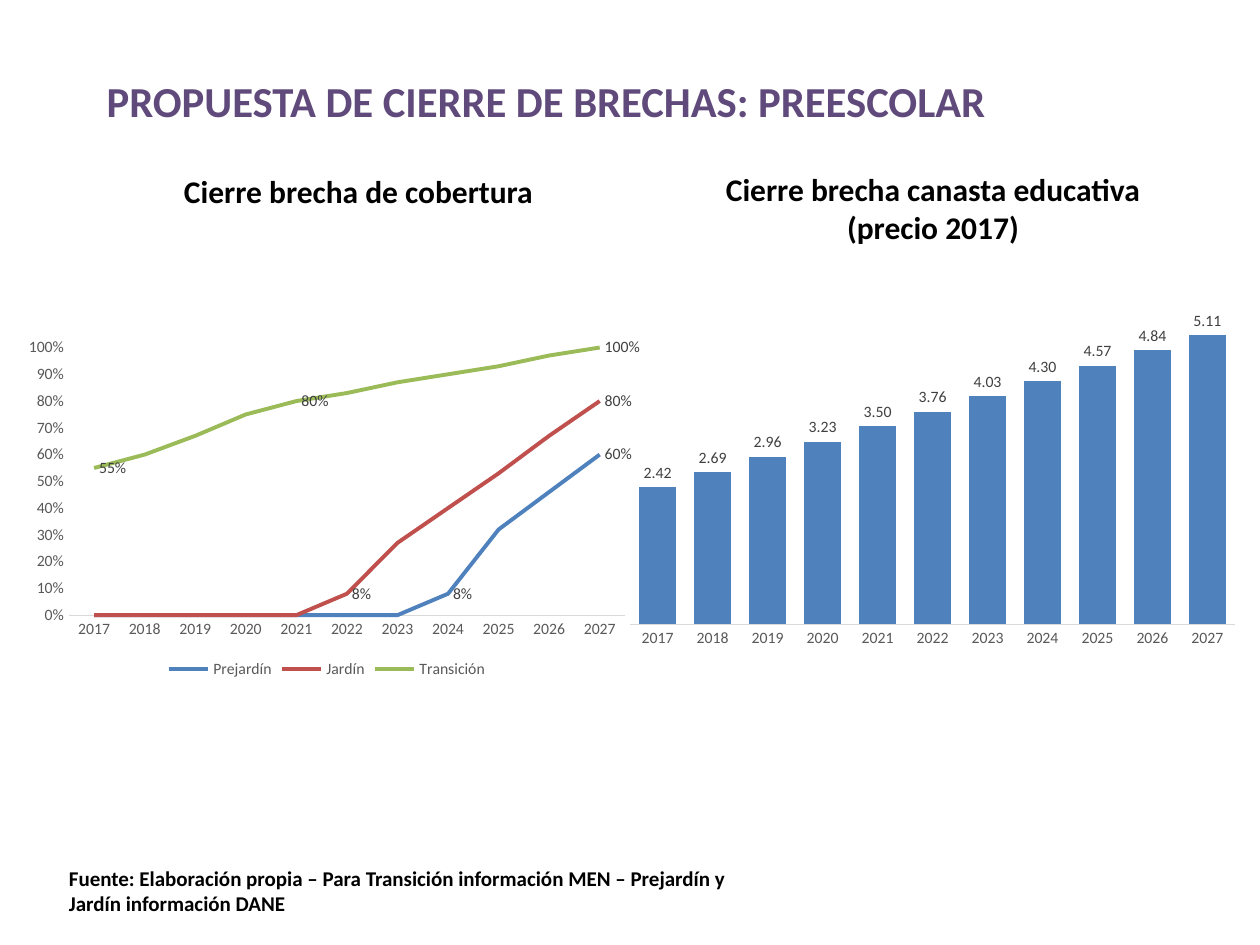
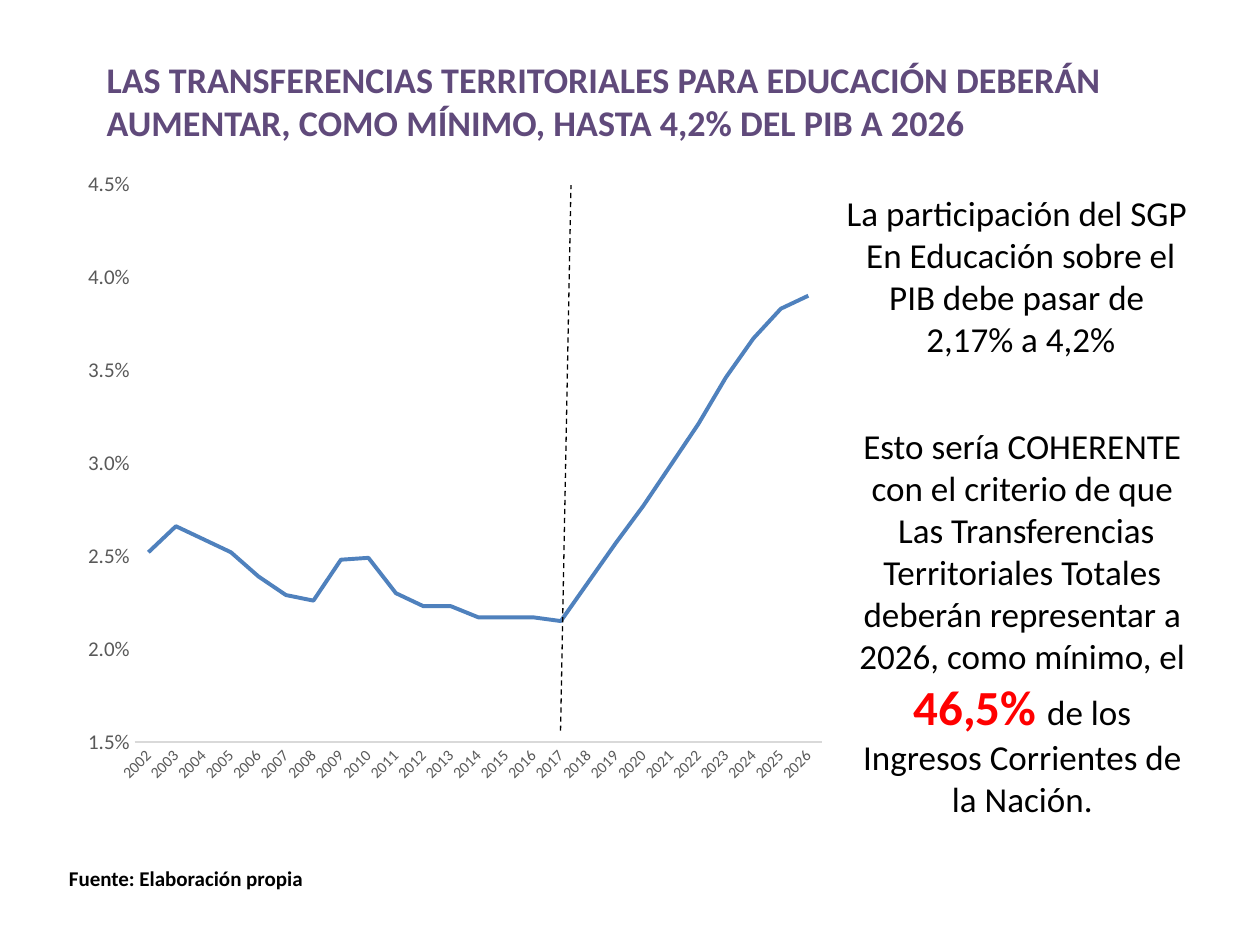
from dataclasses import dataclass, field

from lxml.etree import SubElement
from pptx import Presentation
from pptx.chart.chart import Chart
from pptx.chart.data import CategoryChartData as ChartData
from pptx.dml.color import RGBColor
from pptx.enum.chart import XL_CHART_TYPE as Kind
from pptx.enum.chart import XL_LABEL_POSITION as Spot
from pptx.enum.chart import XL_LEGEND_POSITION as Side
from pptx.enum.chart import XL_TICK_MARK as Tick
from pptx.enum.dml import MSO_LINE as Dash
from pptx.enum.shapes import MSO_CONNECTOR as Link
from pptx.enum.text import MSO_ANCHOR as Anchor
from pptx.enum.text import PP_ALIGN as Align
from pptx.oxml.ns import qn
from pptx.slide import Slide
from pptx.util import Cm, Pt

FONT = "Calibri"
BLACK = RGBColor(0x00, 0x00, 0x00)
PURPLE = RGBColor(0x60, 0x4A, 0x7B)
RED = RGBColor(0xFF, 0x00, 0x00)
BLUE = RGBColor(0x4F, 0x81, 0xBD)
BRICK = RGBColor(0xC0, 0x50, 0x4D)
GREEN = RGBColor(0x9B, 0xBB, 0x59)
GREY = RGBColor(0x59, 0x59, 0x59)
DARK = RGBColor(0x40, 0x40, 0x40)
PALE = RGBColor(0xD9, 0xD9, 0xD9)


@dataclass
class Box:
    left: float
    top: float
    width: float
    height: float

    def size(self) -> list[int]:
        return [Cm(n) for n in (self.left, self.top, self.width, self.height)]


@dataclass
class Run:
    text: str
    size: float | None = None
    color: RGBColor | None = None
    bold: bool | None = None


@dataclass
class Line:
    name: str
    color: RGBColor
    values: list[float]
    marks: list[int] = field(default_factory=list)


TITLE = Box(1.9, 0.76, 22, 2.54)
SOURCE = Box(1.14, 17.32, 14.2, 1.27)


def style(font, size: float, color: RGBColor, bold: bool = False) -> None:
    font.name, font.size, font.bold = FONT, Pt(size), bold
    font.color.rgb = color


def write(slide: Slide, box: Box, *paras: str | list[Run], size: float,
          color: RGBColor = BLACK, bold: bool = False,
          align: Align = Align.CENTER, anchor: Anchor = Anchor.TOP) -> None:
    """Add a text box; a run's own format wins over the keywords."""
    frame = slide.shapes.add_textbox(*box.size()).text_frame
    frame.word_wrap = True
    frame.vertical_anchor = anchor
    for i, para in enumerate(paras):
        line = frame.paragraphs[0] if i == 0 else frame.add_paragraph()
        line.alignment = align
        for part in [Run(para)] if isinstance(para, str) else para:
            run = line.add_run()
            run.text = part.text
            style(run.font, part.size or size, part.color or color,
                  bold if part.bold is None else part.bold)


def frame_slide(deck: Presentation, title: str, size: float, source: str) -> Slide:
    """Add a blank slide with its title and source note."""
    slide = deck.slides.add_slide(deck.slide_layouts[6])
    write(slide, TITLE, title, size=size, color=PURPLE, bold=True,
          align=Align.LEFT, anchor=Anchor.MIDDLE)
    write(slide, SOURCE, source, size=12, bold=True, align=Align.LEFT)
    return slide


def plot(slide: Slide, box: Box, kind: Kind, years: range,
         lines: list[Line], form: str) -> Chart:
    """Add a chart with the shared axis look."""
    data = ChartData(number_format=form)
    data.categories = [str(year) for year in years]
    for line in lines:
        data.add_series(line.name, line.values)
    chart = slide.shapes.add_chart(kind, *box.size(), data).chart
    style(chart.font, 10, BLACK)
    chart.has_title = chart.has_legend = False
    chart.plots[0].vary_by_categories = False
    for axis in (chart.category_axis, chart.value_axis):
        axis.has_major_gridlines = False
        axis.major_tick_mark = axis.minor_tick_mark = Tick.NONE
        style(axis.tick_labels.font, 9, GREY)
    edge = chart.category_axis.format.line
    edge.color.rgb, edge.width = PALE, Pt(0.75)
    return chart


def plot_lines(slide: Slide, box: Box, years: range, lines: list[Line],
               form: str, low: float, high: float, step: float) -> Chart:
    chart = plot(slide, box, Kind.LINE, years, lines, form)
    axis = chart.value_axis
    axis.minimum_scale, axis.maximum_scale, axis.major_unit = low, high, step
    axis.tick_labels.number_format = form
    axis.tick_labels.number_format_is_linked = False
    axis.format.line.fill.background()
    for line, series in zip(lines, chart.plots[0].series):
        series.smooth = False
        series.format.line.color.rgb = line.color
        series.format.line.width = Pt(2.25)
        for i in line.marks:
            label = series.points[i].data_label
            style(label.font, 9, DARK)
            label.position = Spot.RIGHT
        if line.marks:
            series.data_labels.show_value = False
    return chart


def plot_bars(slide: Slide, box: Box, years: range, line: Line, form: str) -> None:
    chart = plot(slide, box, Kind.COLUMN_CLUSTERED, years, [line], form)
    chart.value_axis.visible = False
    chart.value_axis.minimum_scale = 0
    bars = chart.plots[0]
    bars.gap_width, bars.overlap = 50, -27
    fill = bars.series[0].format.fill
    fill.solid()
    fill.fore_color.rgb = line.color
    labels = bars.series[0].data_labels
    labels.show_value = True
    labels.position = Spot.OUTSIDE_END
    labels.number_format, labels.number_format_is_linked = form, False
    style(labels.font, 9, DARK)


def place_plot(chart: Chart, **parts: float) -> None:
    """Fix the inner plot area as fractions of the chart."""
    area = chart.plots[0]._element.getparent()
    old = area.find(qn("c:layout"))
    if old is not None:
        area.remove(old)
    outer = SubElement(area, qn("c:layout"))
    area.insert(0, outer)
    layout = SubElement(outer, qn("c:manualLayout"))
    rules = {"layoutTarget": "inner", "xMode": "edge", "yMode": "edge", **parts}
    for tag, value in rules.items():
        SubElement(layout, qn(f"c:{tag}")).set("val", str(value))


def draw_split(slide: Slide, *ends: float) -> None:
    """Draw the dashed line between past and proposed years."""
    split = slide.shapes.add_connector(Link.STRAIGHT, *map(Cm, ends))
    split.line.color.rgb, split.line.width = BLACK, Pt(0.75)
    split.line.dash_style = Dash.DASH
    SubElement(split._element.spPr, qn("a:effectLst"))


def show_gaps(deck: Presentation) -> None:
    slide = frame_slide(
        deck, "PROPUESTA DE CIERRE DE BRECHAS: PREESCOLAR", 24.4,
        "Fuente: Elaboración propia – Para Transición información MEN – "
        "Prejardín y Jardín información DANE")
    write(slide, Box(1.88, 3.35, 10.7, 1.02), "Cierre brecha de cobertura",
          size=18, bold=True)
    write(slide, Box(13.46, 3.3, 10.7, 1.8),
          "Cierre brecha canasta educativa (precio 2017)", size=18, bold=True)
    years = range(2017, 2028)
    plot_bars(slide, Box(12.45, 5.59, 12.7, 7.62), years, Line(
        "Series 1", BLUE,
        [2.42, 2.69, 2.96, 3.23, 3.50, 3.76, 4.03, 4.30, 4.57, 4.84, 5.11]), "0.00")
    lines = [
        Line("Prejardín", BLUE, [0] * 7 + [0.08, 0.32, 0.46, 0.60], [7, 10]),
        Line("Jardín", BRICK,
             [0] * 5 + [0.08, 0.27, 0.40, 0.53, 0.67, 0.80], [5, 10]),
        Line("Transición", GREEN,
             [0.55, 0.60, 0.67, 0.75, 0.80, 0.83, 0.87, 0.90, 0.93, 0.97, 1],
             [0, 4, 10]),
    ]
    chart = plot_lines(slide, Box(0.33, 6.68, 12.57, 7.09), years, lines,
                       "0%", 0, 1, 0.1)
    chart.has_legend = True
    chart.legend.position = Side.BOTTOM
    chart.legend.include_in_layout = False
    style(chart.legend.font, 9, GREY)


def show_share(deck: Presentation) -> None:
    slide = frame_slide(
        deck, "LAS TRANSFERENCIAS TERRITORIALES PARA EDUCACIÓN DEBERÁN "
        "AUMENTAR, COMO MÍNIMO, HASTA 4,2% DEL PIB A 2026", 20.6,
        "Fuente: Elaboración propia")
    share = Line("Series 1", BLUE, [
        0.0252, 0.0266, 0.0259, 0.0252, 0.0239, 0.0229, 0.0226, 0.0248, 0.0249,
        0.023, 0.0223, 0.0223, 0.0217, 0.0217, 0.0217, 0.0215, 0.0236, 0.0257,
        0.0277, 0.0299, 0.0321, 0.0346, 0.0367, 0.0383, 0.039])
    chart = plot_lines(slide, Box(1.14, 3.33, 15.75, 12.78), range(2002, 2027),
                       [share], "0.0%", 0.015, 0.045, 0.005)
    chart.value_axis.tick_labels.font.size = Pt(12)
    turn = chart.category_axis._element.find(qn("c:txPr")).find(qn("a:bodyPr"))
    turn.set("rot", str(-45 * 60000))
    place_plot(chart, x=0.1, y=0.03, w=0.88, h=0.88)
    draw_split(slide, 11.3, 14.73, 11.51, 3.73)
    write(slide, Box(16.81, 3.73, 7.54, 3.68), "La participación del SGP ",
          "En Educación sobre el PIB debe pasar de ", "2,17% a 4,2%", size=20)
    write(slide, Box(16.89, 8.43, 7.44, 8.28),
          "Esto sería COHERENTE con el criterio de que",
          [Run(" Las Transferencias Territoriales Totales deberán "
               "representar a 2026, como mínimo, el "),
           Run("46,5% ", 28, RED, True),
           Run("de los Ingresos Corrientes de la Nación.")], size=20)


def main() -> None:
    deck = Presentation()
    deck.slide_width, deck.slide_height = Cm(25.4), Cm(19.05)
    show_gaps(deck)
    show_share(deck)
    deck.save("out.pptx")


if __name__ == "__main__":
    main()
